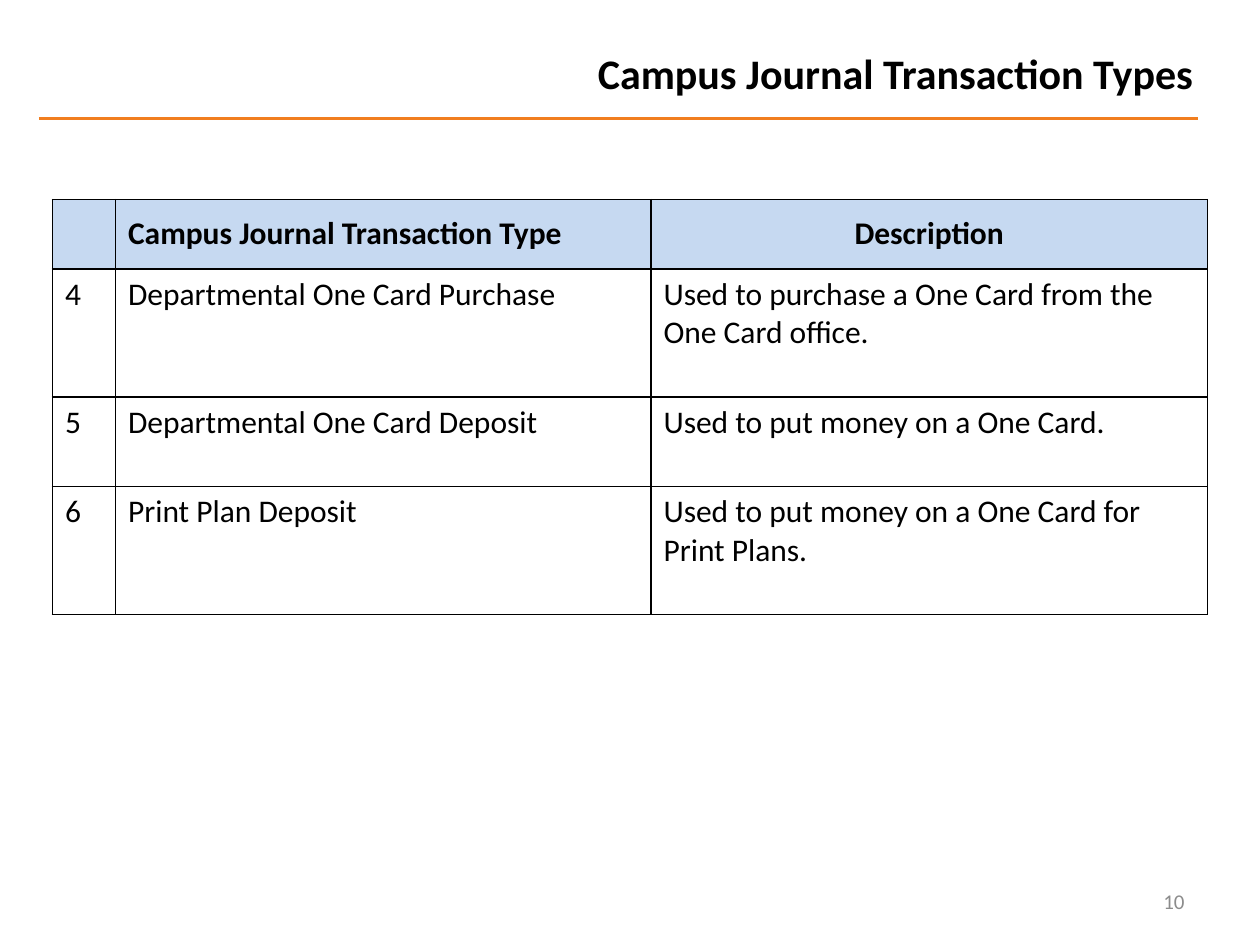
from lxml import etree
from pptx import Presentation
from pptx.dml.color import RGBColor
from pptx.enum.shapes import MSO_CONNECTOR
from pptx.enum.text import MSO_ANCHOR, MSO_AUTO_SIZE, PP_ALIGN
from pptx.oxml.ns import qn
from pptx.util import Pt

LEFT, CENTER, RIGHT = PP_ALIGN.LEFT, PP_ALIGN.CENTER, PP_ALIGN.RIGHT
TOP, MIDDLE = MSO_ANCHOR.TOP, MSO_ANCHOR.MIDDLE
STRAIGHT = MSO_CONNECTOR.STRAIGHT
NO_AUTOFIT = MSO_AUTO_SIZE.NONE

FONT = "Calibri"
BLACK, GRAY, ORANGE, PALE_BLUE = "000000", "8C8C8C", "F17E1F", "C6D9F1"
TITLE_ONLY = 5

COLUMN_WIDTHS = [36, 306, 318]
ROW_HEIGHTS = [39.6, 73.2, 51.2, 73.2]
TRANSACTION_TYPES = [
    ["", "Campus Journal Transaction Type", "Description"],
    ["4", "Departmental One Card Purchase",
     "Used to purchase a One Card from the One Card office."],
    ["5", "Departmental One Card Deposit", "Used to put money on a One Card."],
    ["6", "Print Plan Deposit", "Used to put money on a One Card for Print Plans."],
]


def color(hex_code):
    return RGBColor.from_string(hex_code)


def write(frame, text, size=18, bold=False, hex_code=BLACK, align=LEFT):
    frame.word_wrap = True
    paragraph = frame.paragraphs[0]
    paragraph.text = text
    paragraph.alignment = align
    font = paragraph.font
    font.name, font.size, font.bold = FONT, Pt(size), bold
    font.color.rgb = color(hex_code)


def add_title(slide, text):
    title = slide.shapes.title
    title.left, title.top, title.width, title.height = Pt(149.8), Pt(23.8), Pt(539.3), Pt(41.8)
    write(title.text_frame, text, size=24, bold=True, align=RIGHT)
    title.text_frame.auto_size = NO_AUTOFIT
    title.text_frame.vertical_anchor = TOP


def add_rule(slide):
    rule = slide.shapes.add_connector(STRAIGHT, Pt(22.3), Pt(67.7), Pt(684.7), Pt(67.7))
    rule.line.color.rgb = color(ORANGE)
    rule.line.width = Pt(2)
    etree.SubElement(rule._element.spPr, qn("a:effectLst"))


def add_page_number(slide, number):
    page_number = slide.shapes.add_textbox(Pt(516.2), Pt(500.4), Pt(167.8), Pt(28.8))
    write(page_number.text_frame, number, size=12, hex_code=GRAY, align=RIGHT)
    page_number.text_frame.vertical_anchor = MIDDLE


def set_borders(cell, hex_code, width):
    properties = cell._tc.get_or_add_tcPr()
    # Borders must come before the fill
    for position, side in enumerate(("lnL", "lnR", "lnT", "lnB")):
        border = etree.Element(qn(f"a:{side}"), w=str(Pt(width)))
        fill = etree.SubElement(border, qn("a:solidFill"))
        etree.SubElement(fill, qn("a:srgbClr"), val=hex_code)
        properties.insert(position, border)


def format_cell(cell, text, is_header, align):
    write(cell.text_frame, text, bold=is_header, align=align)
    cell.vertical_anchor = MIDDLE if is_header else TOP
    if is_header:
        cell.fill.solid()
        cell.fill.fore_color.rgb = color(PALE_BLUE)
    else:
        cell.fill.background()
    set_borders(cell, BLACK, 1)


def add_transaction_table(slide):
    table = slide.shapes.add_table(
        len(ROW_HEIGHTS), len(COLUMN_WIDTHS), Pt(30), Pt(114),
        Pt(sum(COLUMN_WIDTHS)), Pt(sum(ROW_HEIGHTS))).table
    table.horz_banding = False
    for column, width in zip(table.columns, COLUMN_WIDTHS):
        column.width = Pt(width)
    for row, height in zip(table.rows, ROW_HEIGHTS):
        row.height = Pt(height)
    for r, entries in enumerate(TRANSACTION_TYPES):
        for c, text in enumerate(entries):
            align = CENTER if text == "Description" else LEFT
            format_cell(table.cell(r, c), text, r == 0, align)


def main():
    deck = Presentation()
    deck.slide_width, deck.slide_height = Pt(720), Pt(540)
    slide = deck.slides.add_slide(deck.slide_layouts[TITLE_ONLY])

    # Heading and page furniture
    add_rule(slide)
    add_page_number(slide, "10")
    add_title(slide, "Campus Journal Transaction Types")

    # Transaction types and their descriptions
    add_transaction_table(slide)
    deck.save("out.pptx")


if __name__ == "__main__":
    main()
